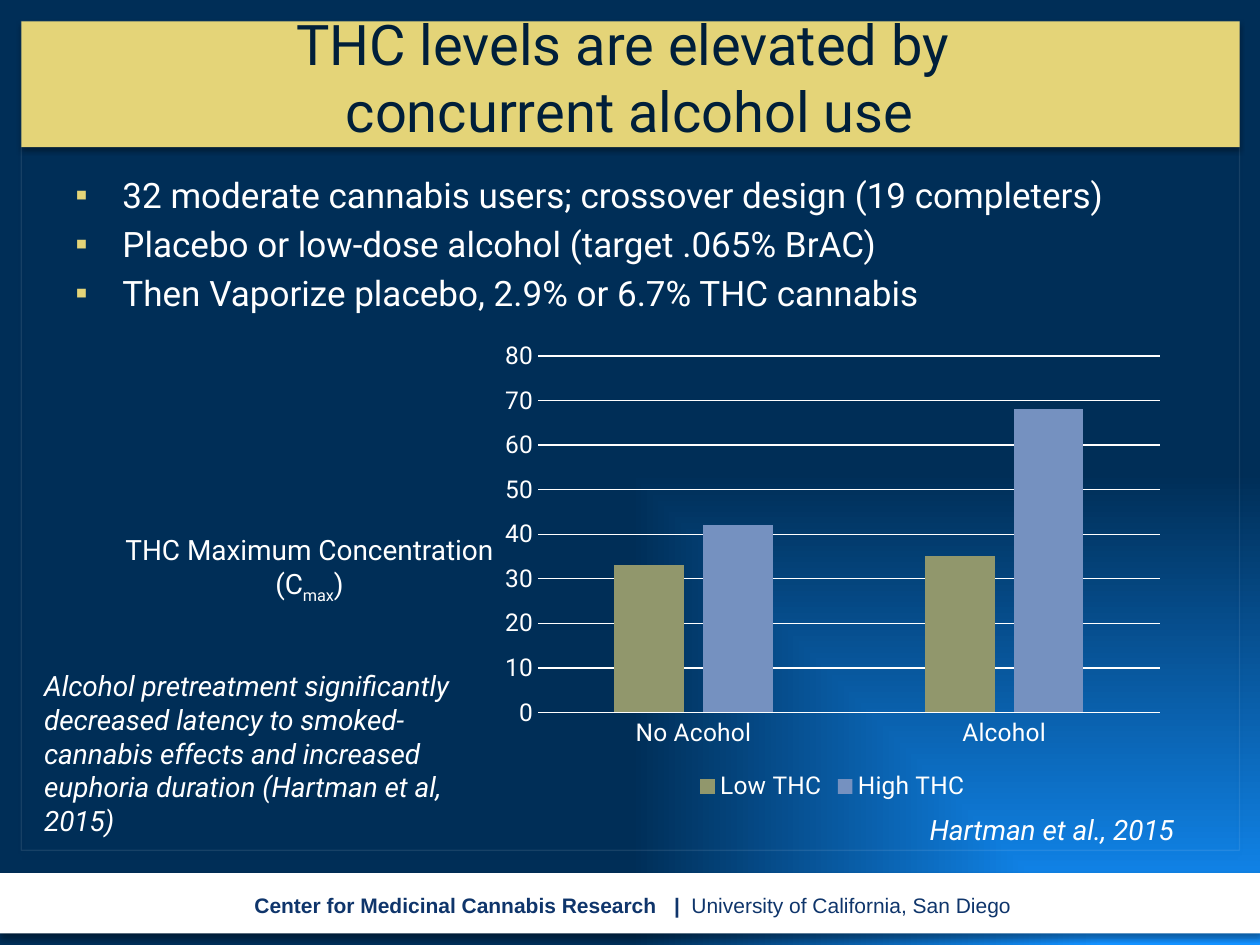
from lxml import etree
from pptx import Presentation
from pptx.chart.data import CategoryChartData
from pptx.dml.color import RGBColor
from pptx.enum.chart import XL_CHART_TYPE, XL_LEGEND_POSITION, XL_TICK_MARK
from pptx.enum.shapes import MSO_SHAPE
from pptx.enum.text import MSO_ANCHOR, PP_ALIGN
from pptx.oxml.ns import qn
from pptx.util import Cm, Pt

RECT = MSO_SHAPE.RECTANGLE
COLUMN = XL_CHART_TYPE.COLUMN_CLUSTERED
BOTTOM = XL_LEGEND_POSITION.BOTTOM
NO_TICK = XL_TICK_MARK.NONE
TOP, MIDDLE = MSO_ANCHOR.TOP, MSO_ANCHOR.MIDDLE
LEFT, CENTER = PP_ALIGN.LEFT, PP_ALIGN.CENTER

WHITE, NAVY, INK = "FFFFFF", "002E57", "001F3A"
BLUE, GOLD, FOOT = "1391FF", "E4D478", "0F356B"


def color(code):
    return RGBColor.from_string(code)


def add(parent, tag, **attrs):
    return etree.SubElement(parent, qn(tag), attrs)


class Deck:
    """Holds the style and the current slide."""

    def __init__(self, font="Roboto", ink=WHITE):
        self.font, self.ink = font, ink
        self.file = Presentation()
        self.file.slide_width, self.file.slide_height = Cm(25.4), Cm(19.05)
        self.slide = self.file.slides.add_slide(self.file.slide_layouts[6])

    def glow(self, start, end):
        """Fill the background with a gradient from the lower right corner."""
        fill = self.slide.background.fill
        fill.gradient()
        for stop, code in zip(fill.gradient_stops, (start, end)):
            stop.color.rgb = color(code)
        grad = self.slide.element.find(".//" + qn("a:gradFill"))
        grad.remove(grad.find(qn("a:lin")))
        way = add(grad, "a:path", path="rect")
        add(way, "a:fillToRect", l="100000", t="100000")

    def panel(self, box, fill=None, line=None, alpha=100):
        shape = self.slide.shapes.add_shape(RECT, *map(Cm, box))
        if fill:
            shape.fill.solid()
            shape.fill.fore_color.rgb = color(fill)
        else:
            shape.fill.background()
        if line:
            shape.line.color.rgb = color(line)
            shape.line.width = Pt(0.75)
            tint = shape.line._ln.find(".//" + qn("a:srgbClr"))
            add(tint, "a:alpha", val=str(alpha * 1000))
        else:
            shape.line.fill.background()
        shape.shadow.inherit = False
        shade = add(shape._element.spPr.find(qn("a:effectLst")), "a:outerShdw",
                    blurRad=str(Pt(3.1)), dist=str(Pt(1.8)), dir="5400000",
                    rotWithShape="0")
        tint = add(shade, "a:srgbClr", val="000000")
        add(tint, "a:alpha", val="35000")

    def text(self, box, paras, size, ink=None, font=None, align=LEFT,
             anchor=TOP, italic=False, gap=0, bullet=None, tabs=()):
        frame = self.slide.shapes.add_textbox(*map(Cm, box)).text_frame
        frame.word_wrap = True
        frame.vertical_anchor = anchor
        for i, words in enumerate(paras):
            para = frame.add_paragraph() if i else frame.paragraphs[0]
            para.text = words
            para.alignment = align
            if i and gap:
                para.space_before = Pt(gap)
            props = para._p.get_or_add_pPr()
            if bullet:
                props.set("marL", str(Cm(0.95)))
                props.set("indent", str(Cm(-0.95)))
                tint = add(props, "a:buClr")
                add(tint, "a:srgbClr", val=bullet)
                add(props, "a:buFont", typeface="Arial")
                add(props, "a:buChar", char="▪")
            if tabs:
                stops = add(props, "a:tabLst")
                for stop in tabs:
                    add(stops, "a:tab", pos=str(Cm(stop)), algn="l")
            para.font.size = Pt(size)
            para.font.name = font or self.font
            para.font.color.rgb = color(ink or self.ink)
            para.font.italic = italic
        return frame.paragraphs[0]

    def style(self, font, size):
        font.name, font.size = self.font, Pt(size)
        font.color.rgb = color(self.ink)

    def rule(self, line):
        line.color.rgb = color(self.ink)
        line.width = Pt(0.75)

    def chart(self, box, cats, series):
        """Draw columns; series maps a name to its values and colour."""
        data = CategoryChartData()
        data.categories = cats
        for name, (vals, _) in series.items():
            data.add_series(name, vals)
        chart = self.slide.shapes.add_chart(COLUMN, *map(Cm, box), data).chart
        self.style(chart.font, 10)
        chart.has_title = False
        chart.has_legend = True
        chart.legend.position = BOTTOM
        chart.legend.include_in_layout = False
        self.style(chart.legend.font, 14)
        plot = chart.plots[0]
        plot.gap_width, plot.overlap = 219, -27
        plot.vary_by_categories = False
        for bar, (_, code) in zip(plot.series, series.values()):
            bar.format.fill.solid()
            bar.format.fill.fore_color.rgb = color(code)
        cat, val = chart.category_axis, chart.value_axis
        for axis in (cat, val):
            axis.major_tick_mark = axis.minor_tick_mark = NO_TICK
            self.style(axis.tick_labels.font, 14)
        self.rule(cat.format.line)
        val.format.line.fill.background()
        val.minimum_scale, val.maximum_scale, val.major_unit = 0, 80, 10
        self.rule(val.major_gridlines.format.line)


def main():
    deck = Deck()
    deck.glow(BLUE, NAVY)
    deck.panel((0.43, 0.43, 24.56, 16.71), line="E3E9F2", alpha=9)
    deck.panel((0, 17.6, 25.4, 1.22), fill=WHITE)
    foot = deck.text((4.88, 17.86, 17.58, 0.76),
                     ["Center for Medicinal Cannabis Research\t|\t"], 12,
                     FOOT, "Arial", anchor=MIDDLE, tabs=(8.46, 8.81))
    foot.runs[0].font.bold = True
    foot.add_run().text = "University of California, San Diego"

    deck.panel((0.43, 0.43, 24.56, 2.54), fill=GOLD)
    deck.text((1.27, 0.76, 22.86, 1.57),
              ["THC levels are elevated by \vconcurrent alcohol use"], 32,
              INK, align=CENTER, anchor=MIDDLE)
    deck.text((1.27, 3.38, 22.86, 4.29), [
        "32 moderate cannabis users; crossover design (19 completers)",
        "Placebo or low-dose alcohol (target .065% BrAC)",
        "Then Vaporize placebo, 2.9% or 6.7% THC cannabis",
    ], 20, gap=4, bullet=GOLD)

    deck.chart((9.91, 6.68, 13.74, 9.58), ["No Acohol", "Alcohol"], {
        "Low THC": ((33, 35), "91976C"),
        "High THC": ((42, 68), "7591C0"),
    })
    label = deck.text((1.78, 10.62, 8.92, 1.63),
                      ["THC Maximum Concentration (C"], 16, align=CENTER)
    sub = label.add_run()
    sub.text = "max"
    sub._r.get_or_add_rPr().set("baseline", "-25000")
    label.add_run().text = ")"
    deck.text((0.64, 13.36, 8.84, 3.68), [
        "Alcohol pretreatment significantly decreased latency to "
        "smoked-cannabis effects and increased euphoria duration "
        "(Hartman et al, 2015)"], 16, italic=True)
    deck.text((18.49, 16.26, 6.45, 0.94), ["Hartman et al., 2015"], 16,
              italic=True)
    deck.file.save("out.pptx")


if __name__ == "__main__":
    main()
